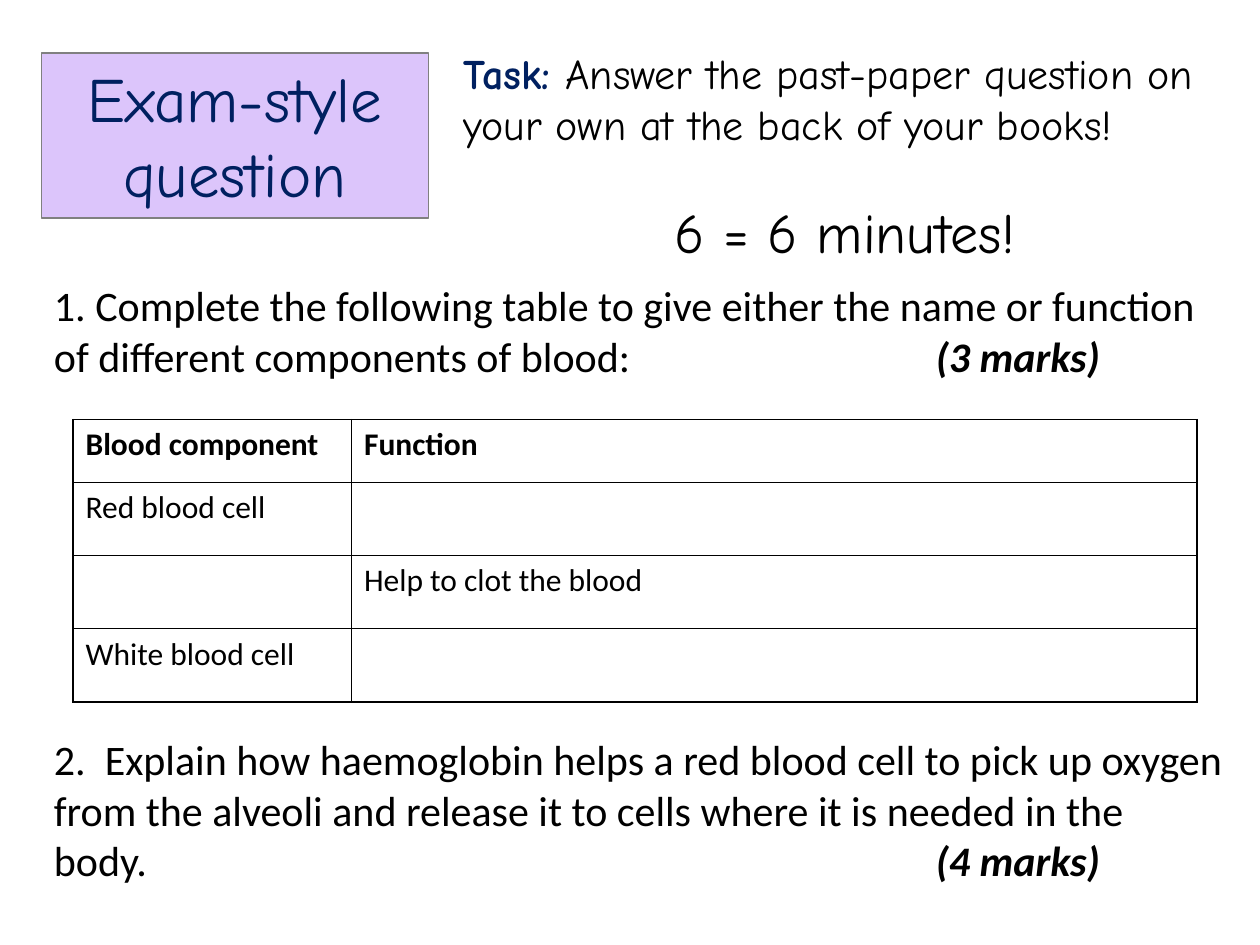
from lxml import etree
from pptx import Presentation
from pptx.dml.color import RGBColor
from pptx.enum import shapes, text
from pptx.oxml import ns
from pptx.util import Inches, Pt

BLACK = RGBColor(0, 0, 0)
WHITE = RGBColor(255, 255, 255)
NAVY = RGBColor(0x00, 0x20, 0x60)
LILAC = RGBColor(0xDC, 0xC5, 0xFB)
GREY = RGBColor(0x80, 0x80, 0x80)
COMIC, CALIBRI = "Comic Neue", "Calibri"
PLAIN, BOLD, MARKS = {}, {"bold": True}, {"bold": True, "italic": True}

# Content: each paragraph is a list of (words, size, colour, style)
TITLE = [("Exam-style question", 36, NAVY, PLAIN)]
TASK = [
    ("Task: ", 24, NAVY, BOLD),
    ("Answer the past-paper question on your own at the back of your books!", 24, BLACK, PLAIN),
]
TIMING = [("6 = 6 minutes!", 32, BLACK, PLAIN)]
QUESTIONS = [
    ("1. Complete the following table to give either the name or function "
     "of different components of blood:", "(3 marks)"),
    ("2.  Explain how haemoglobin helps a red blood cell to pick up oxygen "
     "from the alveoli and release it to cells where it is needed in the body.", "(4 marks)"),
]
BLOOD_ROWS = [
    ("Blood component", "Function"),
    ("Red blood cell", ""),
    ("", "Help to clot the blood"),
    ("White blood cell", ""),
]
COLUMN_WIDTHS = (2.21, 6.71)
ROW_HEIGHTS = (0.5, 0.58, 0.58, 0.58)
TABLE_GAP = 202  # points left between the questions for the table
MARKS_TAB = 7    # inches from the text edge


def write(para, runs, font, align=text.PP_ALIGN.LEFT, before=0):
    para.alignment = align
    para.space_before = Pt(before)
    for words, size, colour, style in runs:
        span = para.add_run()
        span.text = words
        span.font.name = font
        span.font.size = Pt(size)
        span.font.color.rgb = colour
        span.font.bold = style.get("bold", False)
        span.font.italic = style.get("italic", False)


def add_text_box(slide, *place):
    box = slide.shapes.add_textbox(*map(Inches, place))
    box.text_frame.word_wrap = True
    return box.text_frame


def add_tab(para, inches):
    tabs = etree.SubElement(para._p.get_or_add_pPr(), ns.qn("a:tabLst"))
    etree.SubElement(tabs, ns.qn("a:tab"), pos=str(Inches(inches)), algn="l")


def add_borders(cell):
    properties = cell._tc.get_or_add_tcPr()
    for index, side in enumerate(("lnL", "lnR", "lnT", "lnB")):
        line = etree.Element(ns.qn("a:" + side), w=str(Pt(1)))
        fill = etree.SubElement(line, ns.qn("a:solidFill"))
        etree.SubElement(fill, ns.qn("a:srgbClr"), val=str(BLACK))
        properties.insert(index, line)


deck = Presentation()
deck.slide_width, deck.slide_height = Inches(10), Inches(7.5)
slide = deck.slides.add_slide(deck.slide_layouts[6])

# Title panel
panel = slide.shapes.add_shape(
    shapes.MSO_SHAPE.RECTANGLE, *map(Inches, (0.33, 0.42, 3.07, 1.31)))
panel.shadow.inherit = False
panel.fill.solid()
panel.fill.fore_color.rgb = LILAC
panel.line.color.rgb = GREY
panel.line.width = Pt(0.75)
panel.text_frame.word_wrap = True
panel.text_frame.vertical_anchor = text.MSO_ANCHOR.TOP
write(panel.text_frame.paragraphs[0], TITLE, COMIC, text.PP_ALIGN.CENTER)

# Task and timing
task = add_text_box(slide, 3.58, 0.33, 6.25, 1.85)
write(task.paragraphs[0], TASK, COMIC)
write(task.add_paragraph(), TIMING, COMIC, text.PP_ALIGN.CENTER, before=28)

# Questions, with the marks lined up on a tab stop
questions = add_text_box(slide, 0.33, 2.17, 9.5, 4.95)
for number, (question, marks) in enumerate(QUESTIONS):
    para = questions.add_paragraph() if number else questions.paragraphs[0]
    runs = [(question + "\t", 24, BLACK, PLAIN), (marks, 24, BLACK, MARKS)]
    write(para, runs, CALIBRI, before=TABLE_GAP * number)
    add_tab(para, MARKS_TAB)

# Blood component table
table = slide.shapes.add_table(
    len(BLOOD_ROWS), len(COLUMN_WIDTHS), Inches(0.58), Inches(3.33),
    Inches(sum(COLUMN_WIDTHS)), Inches(sum(ROW_HEIGHTS))).table
for column, width in zip(table.columns, COLUMN_WIDTHS):
    column.width = Inches(width)
for row_index, (row, height) in enumerate(zip(BLOOD_ROWS, ROW_HEIGHTS)):
    table.rows[row_index].height = Inches(height)
    for column_index, words in enumerate(row):
        cell = table.cell(row_index, column_index)
        cell.fill.solid()
        cell.fill.fore_color.rgb = WHITE
        add_borders(cell)
        if words:
            style = PLAIN if row_index else BOLD
            write(cell.text_frame.paragraphs[0], [(words, 18, BLACK, style)], CALIBRI)

deck.save("out.pptx")
